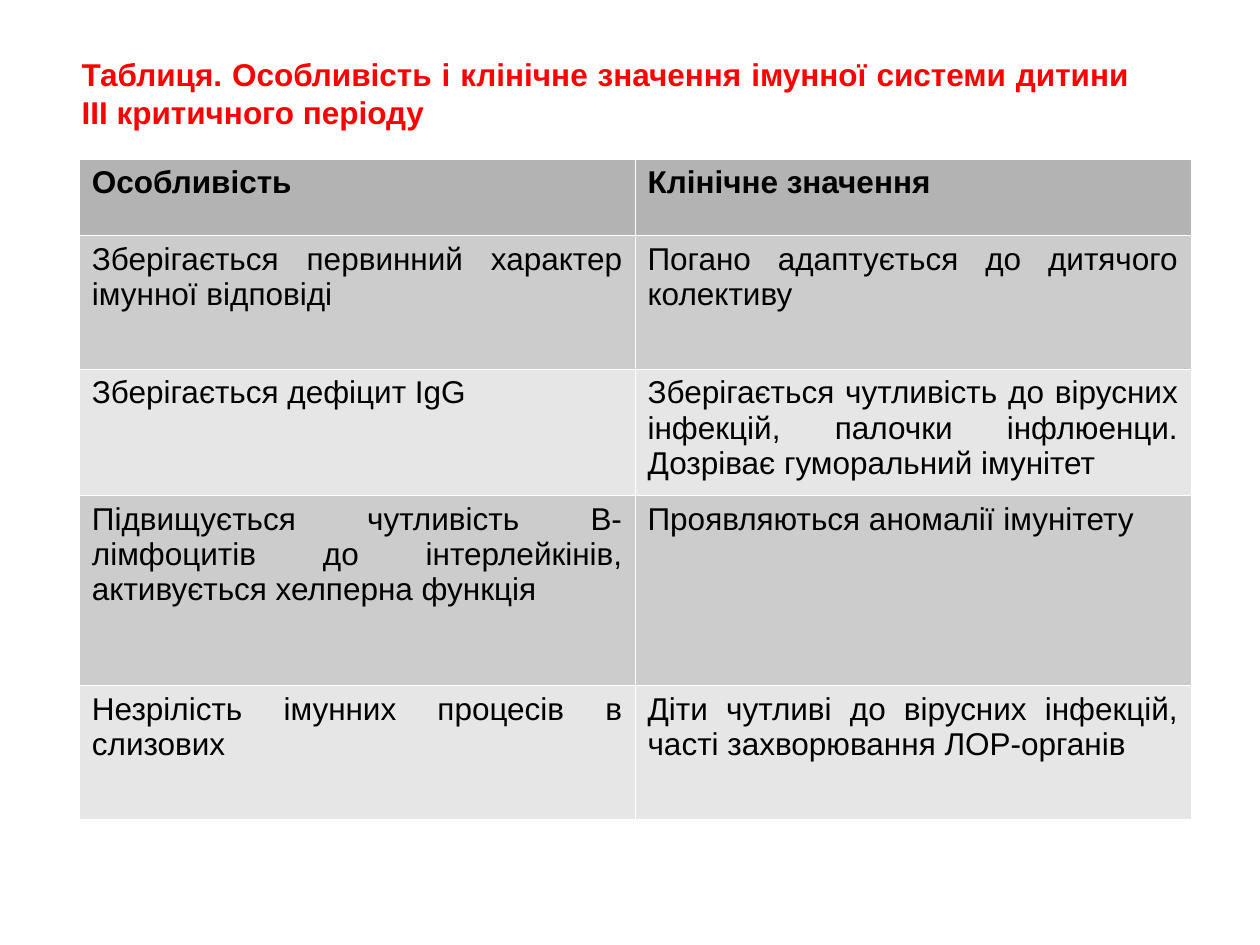
import dataclasses

import lxml.etree
import pptx
import pptx.dml.color
import pptx.enum.text
import pptx.oxml.ns
import pptx.util

INK = {"title": "FF0000", "text": "000000", "line": "FFFFFF",
       "head": "B3B3B3", "odd": "CCCCCC", "even": "E6E6E6"}
WIDE, HIGH = 10, 7.5
FONT = {"name": "Arial", "size": pptx.util.Pt(18)}
EDGE = pptx.util.Pt(0.06)


@dataclasses.dataclass
class Row:
    high: float
    sign: str
    sense: str


ROWS = [
    Row(0.61, "Особливість", "Клінічне значення"),
    Row(1.06, "Зберігається первинний характер імунної відповіді ",
        "Погано адаптується до дитячого колективу "),
    Row(1.0, "Зберігається дефіцит IgG ",
        "Зберігається чутливість до вірусних інфекцій, палочки інфлюенци. "
        "Дозріває гуморальний імунітет "),
    Row(1.51, "Підвищується чутливість В-лімфоцитів до інтерлейкінів, "
        "активується хелперна функція", "Проявляються аномалії імунітету"),
    Row(1.06, "Незрілість імунних процесів в слизових",
        "Діти чутливі до вірусних інфекцій, часті захворювання ЛОР-органів"),
]
TITLE = ["Таблиця. Особливість і клінічне значення імунної системи дитини ",
         "ІІІ критичного періоду"]


def tint(key: str) -> pptx.dml.color.RGBColor:
    return pptx.dml.color.RGBColor.from_string(INK[key])


def place(left: float, top: float, wide: float, high: float) -> list[int]:
    """Turn shares of the slide's size into lengths."""
    return [pptx.util.Inches(share * side) for share, side in
            zip((left, top, wide, high), (WIDE, HIGH, WIDE, HIGH))]


def write(frame, lines: list[str], key: str, bold: bool) -> None:
    frame.word_wrap = True
    for at, line in enumerate(lines):
        para = frame.add_paragraph() if at else frame.paragraphs[0]
        para.alignment = pptx.enum.text.PP_ALIGN.JUSTIFY
        run = para.add_run()
        run.text = line
        for name, value in {**FONT, "bold": bold}.items():
            setattr(run.font, name, value)
        run.font.color.rgb = tint(key)


def border(cell) -> None:
    qn = pptx.oxml.ns.qn
    props = cell._tc.get_or_add_tcPr()
    for at, side in enumerate("LRTB"):
        line = lxml.etree.Element(qn(f"a:ln{side}"), w=str(EDGE))
        fill = lxml.etree.SubElement(line, qn("a:solidFill"))
        lxml.etree.SubElement(fill, qn("a:srgbClr"), val=INK["line"])
        props.insert(at, line)


def grid(slide, rows: list[Row]) -> None:
    total = sum(row.high for row in rows)
    spot = place(0.063, 0.168, 0.882, total / HIGH)
    table = slide.shapes.add_table(len(rows), 2, *spot).table
    for at, row in enumerate(rows):
        table.rows[at].height = pptx.util.Inches(row.high)
        shade = "head" if at == 0 else "odd" if at % 2 else "even"
        for col, text in enumerate((row.sign, row.sense)):
            cell = table.cell(at, col)
            cell.fill.solid()
            cell.fill.fore_color.rgb = tint(shade)
            border(cell)
            write(cell.text_frame, [text], "text", at == 0)


def main() -> None:
    deck = pptx.Presentation()
    deck.slide_width = pptx.util.Inches(WIDE)
    deck.slide_height = pptx.util.Inches(HIGH)
    slide = deck.slides.add_slide(deck.slide_layouts[6])
    title = slide.shapes.add_textbox(*place(0.055, 0.052, 0.851, 0.094))
    write(title.text_frame, TITLE, "title", True)
    grid(slide, ROWS)
    deck.save("out.pptx")


if __name__ == "__main__":
    main()
